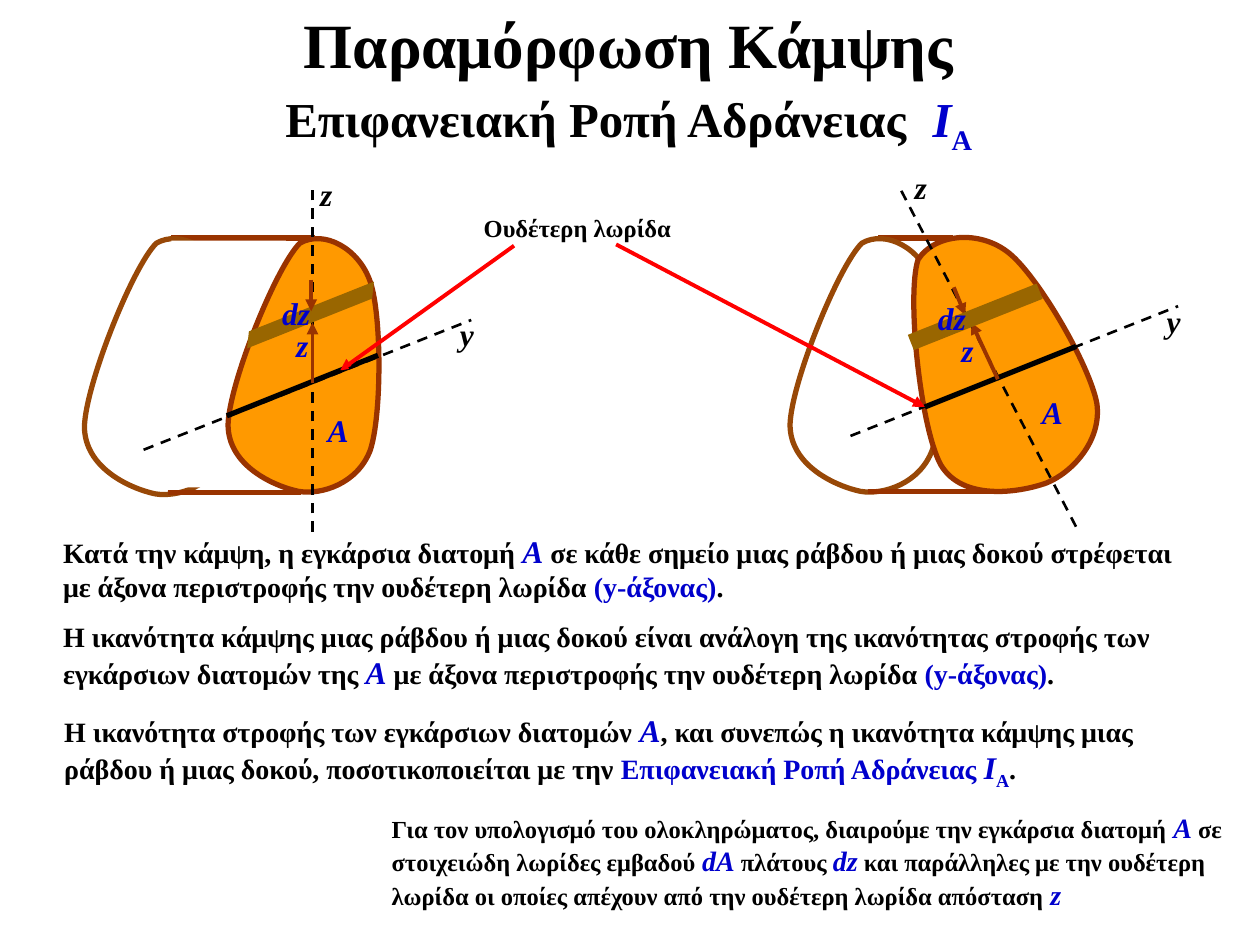
from dataclasses import dataclass

from lxml import etree
from pptx import Presentation
from pptx.dml.color import RGBColor
from pptx.enum.dml import MSO_LINE
from pptx.enum.shapes import MSO_CONNECTOR, MSO_SHAPE
from pptx.enum.text import MSO_ANCHOR, MSO_AUTO_SIZE, PP_ALIGN
from pptx.oxml.ns import qn
from pptx.util import Inches, Pt

STRAIGHT = MSO_CONNECTOR.STRAIGHT
RECTANGLE = MSO_SHAPE.RECTANGLE
PARALLELOGRAM = MSO_SHAPE.PARALLELOGRAM
DASH = MSO_LINE.DASH
LEFT, CENTER = PP_ALIGN.LEFT, PP_ALIGN.CENTER
TOP, MIDDLE = MSO_ANCHOR.TOP, MSO_ANCHOR.MIDDLE
FIT_SHAPE, NO_FIT = MSO_AUTO_SIZE.SHAPE_TO_FIT_TEXT, MSO_AUTO_SIZE.NONE


@dataclass(frozen=True)
class Theme:
    font: str = "Times New Roman"
    ink: str = "000000"
    accent: str = "0000CC"
    paper: str = "FFFFFF"
    section: str = "FF9900"
    edge: str = "993300"
    back_edge: str = "984807"
    strip: str = "996600"
    pointer: str = "FF0000"
    title: float = 36
    subtitle: float = 27.9
    gap: float = 32.4
    symbol: float = 18
    body: float = 16
    note: float = 14
    thick: float = 3
    medium: float = 2.25
    thin: float = 1.5


THEME = Theme()
OUTLINE_GRID = (122, 211)
OUTLINE = [
    (57, 11),
    (38, 30), (1, 122), (0, 155),
    (0, 188), (37, 204), (56, 208),
    (74, 211), (103, 202), (113, 175),
    (122, 147), (122, 69), (113, 42),
    (104, 15), (76, 0), (57, 11),
]


def rgb(color):
    return RGBColor.from_string(color)


def plain(text):
    return text, {}


def blue(text, **style):
    return text, {"color": THEME.accent, **style}


def symbol(text, size=THEME.symbol):
    return blue(text, size=size, italic=True)


def add_text(page, at, spans, size, color=THEME.ink, italic=False, align=LEFT,
             anchor=TOP, inset=(0, 0), wrap=True, fit=NO_FIT):
    box = page.shapes.add_textbox(*map(Inches, at))
    frame = box.text_frame
    frame.word_wrap = wrap
    frame.auto_size = fit
    frame.vertical_anchor = anchor
    frame.margin_left = frame.margin_right = Inches(inset[0])
    frame.margin_top = frame.margin_bottom = Inches(inset[1])
    para = frame.paragraphs[0]
    para.alignment = align
    font = para.font
    font.name, font.bold, font.italic = THEME.font, True, italic
    font.size, font.color.rgb = Pt(size), rgb(color)
    for text, style in spans:
        if text == "\n":
            para.add_line_break()
            continue
        span = para.add_run()
        span.text = text
        if "size" in style:
            span.font.size = Pt(style["size"])
        if "color" in style:
            span.font.color.rgb = rgb(style["color"])
        if "italic" in style:
            span.font.italic = style["italic"]
        if "base" in style:
            span.font._element.set("baseline", str(style["base"] * 1000))


def add_label(page, text, at, color=THEME.ink, align=LEFT):
    add_text(page, at, [plain(text)], THEME.symbol, color, True, align)


def add_line(page, start, end, color, width, dashed=False, arrow=False):
    line = page.shapes.add_connector(STRAIGHT, *map(Inches, (*start, *end)))
    line.line.color.rgb = rgb(color)
    line.line.width = Pt(width)
    if dashed:
        line.line.dash_style = DASH
    if arrow:
        etree.SubElement(line.line._get_or_add_ln(), qn("a:tailEnd"), type="triangle")
    etree.SubElement(line._element.spPr, qn("a:effectLst"))


def add_block(page, kind, at, color, rotation=0):
    block = page.shapes.add_shape(kind, *map(Inches, at))
    block.shadow.inherit = False
    block.fill.solid()
    block.fill.fore_color.rgb = rgb(color)
    block.line.fill.background()
    block.rotation = rotation
    return block


def add_strip(page, at, slant):
    strip = add_block(page, PARALLELOGRAM, at, THEME.strip, 338.3)
    strip.adjustments[0] = slant


def add_section(page, at, edge, fill=None, rotation=0):
    left, top, width, height = map(Inches, at)
    scale = (width / OUTLINE_GRID[0], height / OUTLINE_GRID[1])
    builder = page.shapes.build_freeform(*OUTLINE[0], scale=scale)
    builder.add_line_segments(OUTLINE[1:], close=True)
    section = builder.convert_to_shape(left, top)
    outline = section._element.find(".//" + qn("a:path"))
    steps = outline.findall(qn("a:lnTo"))
    for first in range(0, len(steps), 3):
        curve = etree.Element(qn("a:cubicBezTo"))
        steps[first].addprevious(curve)
        for step in steps[first:first + 3]:
            curve.append(step[0])
            outline.remove(step)
    section.shadow.inherit = False
    section.rotation = rotation
    section.line.color.rgb = rgb(edge)
    section.line.width = Pt(THEME.thick)
    if fill:
        section.fill.solid()
        section.fill.fore_color.rgb = rgb(fill)
    else:
        section.fill.background()


def add_axis(page, start, end):
    add_line(page, start, end, THEME.ink, THEME.thin, dashed=True)


def add_edge(page, start, end):
    add_line(page, start, end, THEME.edge, THEME.thick)


def add_neutral(page, start, end):
    add_line(page, start, end, THEME.ink, THEME.thick)


def add_arrow(page, start, end, color=THEME.edge):
    add_line(page, start, end, color, THEME.medium, arrow=True)


def draw_bent_bar(page):
    add_label(page, "y", (9.26, 2.4, 0.2, 0.27))
    add_edge(page, (6.97, 1.89), (7.56, 1.89))
    add_section(page, (6.27, 1.82, 1.22, 2.11), THEME.back_edge)
    add_edge(page, (6.89, 3.9), (7.99, 3.9))
    add_section(page, (7.11, 1.79, 1.42, 2.19), THEME.edge, THEME.section, 329.8)
    add_neutral(page, (7.34, 3.23), (8.54, 2.75))
    add_axis(page, (6.75, 3.46), (9.35, 2.43))
    add_axis(page, (8.54, 4.18), (7.13, 1.47))
    add_label(page, "z", (7.26, 1.33, 0.2, 0.27))
    add_arrow(page, (4.89, 1.94), (7.34, 3.23), THEME.pointer)
    add_label(page, "Α", (8.27, 3.12, 0.2, 0.27), THEME.accent)


def draw_straight_bar(page):
    add_edge(page, (1.36, 1.89), (2.5, 1.89))
    add_section(page, (0.67, 1.82, 1.22, 2.13), THEME.back_edge)
    add_block(page, RECTANGLE, (1.36, 1.91, 0.91, 1.96), THEME.paper)
    add_edge(page, (1.33, 3.91), (2.39, 3.91))
    add_section(page, (1.81, 1.82, 1.22, 2.11), THEME.edge, THEME.section)
    add_neutral(page, (1.8, 3.3), (3, 2.82))
    add_label(page, "Α", (2.6, 3.26, 0.2, 0.27), THEME.accent)
    add_arrow(page, (4.08, 1.95), (2.7, 2.94), THEME.pointer)
    add_text(page, (3.74, 1.64, 1.75, 0.34), [plain("Ουδέτερη λωρίδα")], THEME.note,
             inset=(0.1, 0.05), wrap=False, fit=FIT_SHAPE)
    add_axis(page, (2.48, 4.22), (2.48, 1.47))
    add_axis(page, (1.14, 3.57), (3.74, 2.54))
    add_label(page, "y", (3.65, 2.5, 0.2, 0.27))
    add_label(page, "z", (2.54, 1.39, 0.2, 0.27))


def draw_strips(page):
    add_label(page, "z", (7.63, 2.63, 0.12, 0.27), THEME.accent)
    add_arrow(page, (7.92, 3.01), (7.71, 2.56))
    add_arrow(page, (7.57, 2.28), (7.66, 2.5))
    add_strip(page, (7.19, 2.45, 1.1, 0.13), 0)
    add_label(page, "dz", (7.42, 2.37, 0.27, 0.27), THEME.accent, CENTER)
    add_arrow(page, (2.48, 3.04), (2.48, 2.56))
    add_label(page, "z", (2.35, 2.59, 0.12, 0.27), THEME.accent)
    add_strip(page, (1.9, 2.44, 1.13, 0.12), 0.52)
    add_arrow(page, (2.47, 2.22), (2.47, 2.47))
    add_label(page, "dz", (2.21, 2.33, 0.28, 0.27), THEME.accent, CENTER)


def write_texts(page):
    subtitle = THEME.subtitle
    add_text(page, (0.5, 0.05, 8.98, 1.18), [
        plain("Παραμόρφωση Κάμψης"), plain("\n"),
        ("Επιφανειακή Ροπή Αδράνειας ", {"size": subtitle}),
        (" ", {"size": THEME.gap, "italic": True}),
        symbol("Ι", subtitle), blue("A", size=subtitle, base=-25),
    ], THEME.title, align=CENTER, anchor=MIDDLE, inset=(0.1, 0.05))

    axis = [blue("(y-άξονας)"), plain(".")]
    statements = [
        (0.5, 4.22, [
            plain("Κατά την κάμψη, η εγκάρσια διατομή "), symbol("A"),
            plain(" σε κάθε σημείο μιας ράβδου ή μιας δοκού στρέφεται "
                  "με άξονα περιστροφής την ουδέτερη λωρίδα "), *axis]),
        (0.5, 4.92, [
            plain("Η ικανότητα κάμψης μιας ράβδου ή μιας δοκού είναι ανάλογη "
                  "της ικανότητας στροφής των εγκάρσιων διατομών της "), symbol("A"),
            plain(" με άξονα περιστροφής την ουδέτερη λωρίδα "), *axis]),
        (0.51, 5.64, [
            plain("Η ικανότητα στροφής των εγκάρσιων διατομών "), symbol("A"),
            plain(", και συνεπώς η ικανότητα κάμψης μιας ράβδου ή μιας δοκού, "
                  "ποσοτικοποιείται με την "),
            blue("Επιφανειακή Ροπή Αδράνειας "), symbol("Ι"),
            blue("Α", size=THEME.symbol, base=-25), plain(".")]),
    ]
    for left, top, spans in statements:
        add_text(page, (left, top, 8.91, 0.64), spans, THEME.body)

    add_text(page, (3.01, 6.38, 6.79, 0.91), [
        plain("Για τον υπολογισμό του ολοκληρώματος, διαιρούμε την εγκάρσια διατομή "),
        symbol("A", THEME.body), plain(" σε στοιχειώδη λωρίδες εμβαδού "),
        symbol("dA", THEME.body), plain(" πλάτους "), symbol("dz", THEME.body),
        plain(" και παράλληλες με την ουδέτερη λωρίδα οι οποίες απέχουν "
              "από την ουδέτερη λωρίδα απόσταση "), symbol("z", THEME.body),
    ], THEME.note, inset=(0.1, 0.05), fit=FIT_SHAPE)


def main():
    deck = Presentation()
    deck.slide_width, deck.slide_height = Inches(10), Inches(7.5)
    page = deck.slides.add_slide(deck.slide_layouts[6])
    draw_bent_bar(page)
    draw_straight_bar(page)
    write_texts(page)
    draw_strips(page)
    deck.save("out.pptx")


if __name__ == "__main__":
    main()
